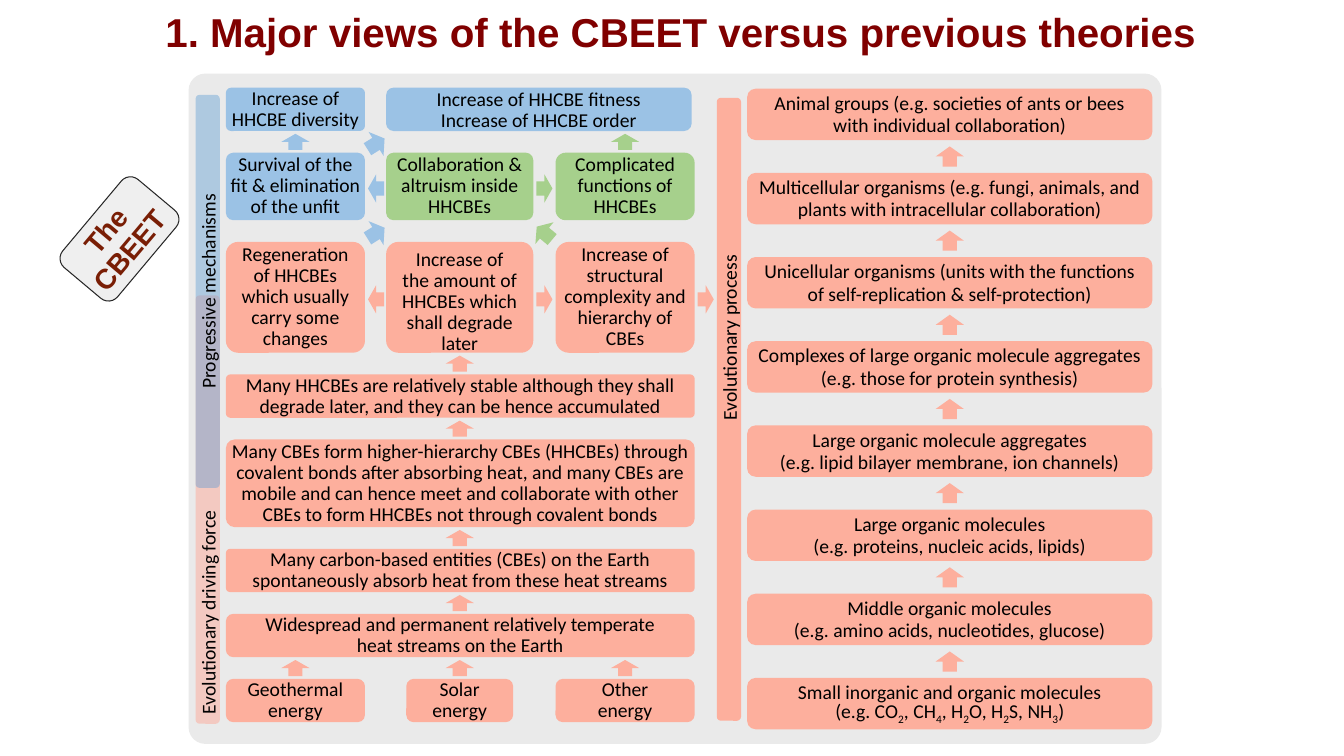
from itertools import accumulate

from lxml import etree
from pptx import Presentation
from pptx.dml.color import RGBColor
from pptx.enum.shapes import MSO_SHAPE as Shape
from pptx.enum.text import MSO_ANCHOR as Anchor, MSO_AUTO_SIZE as Auto, PP_ALIGN as Align
from pptx.oxml.ns import qn
from pptx.util import Inches, Pt

PINK, BLUE, GREEN, GREY = "FDAF9D", "9BC2E5", "A6D08C", "EAEAEA"
UP, LEFT, RIGHT = 270, 180, 0

GAP = 0.215
HEIGHTS = [0.43, 0.67, 1.1, 0.43, 0.87, 0.43, 0.43, 0.43]
TOPS = list(accumulate((h + GAP for h in HEIGHTS[:-1]), initial=0.87))
COLS = [(2.24, 1.38), (3.83, 1.46), (5.51, 1.38)]
WIDE, SOLAR, TOP_PAIR = (2.24, 4.65), (4.03, 1.06), (3.83, 3.03)

STEP_X, STEP_Y, STEP_W, STEP_H, STEP_PITCH = 7.41, 0.88, 4.02, 0.51, 0.835

SIDE = (0.04, 0.04, 0.04, 0.04)
CELLS = [
    (COLS[0], 0, BLUE, 0.12, "Increase of HHCBE diversity", {}),
    (TOP_PAIR, 0, BLUE, 0.17, "Increase of HHCBE fitness\nIncrease of HHCBE order", {"grow": True}),
    (COLS[0], 1, BLUE, 0.11, "Survival of the fit & elimination of the unfit", {"anchor": Anchor.TOP}),
    (COLS[1], 1, GREEN, 0.11, "Collaboration & altruism inside HHCBEs", {"grow": True}),
    (COLS[2], 1, GREEN, 0.15, "Complicated functions of HHCBEs", {}),
    (COLS[0], 2, PINK, 0.11, "Regeneration\nof HHCBEs which usually carry some\nchanges", {"insets": SIDE}),
    (COLS[1], 2, PINK, 0.11, "Increase of\nthe amount of HHCBEs which shall degrade later",
     {"insets": SIDE, "grow": True}),
    (COLS[2], 2, PINK, 0.12, "Increase of structural complexity and hierarchy of CBEs", {"insets": SIDE}),
    (WIDE, 3, PINK, 0.1, "Many HHCBEs are relatively stable although they shall degrade later, "
     "and they can be hence accumulated", {}),
    (WIDE, 4, PINK, 0.1, "Many CBEs form higher-hierarchy CBEs (HHCBEs) through covalent bonds "
     "after absorbing heat, and many CBEs are mobile and can hence meet and collaborate with "
     "other CBEs to form HHCBEs not through covalent bonds", {}),
    (WIDE, 5, PINK, 0.1, "Many carbon-based entities (CBEs) on the Earth spontaneously absorb "
     "heat from these heat streams", {}),
    (WIDE, 6, PINK, 0.17, "Widespread and permanent relatively temperate\nheat streams on the Earth", {}),
    (COLS[0], 7, PINK, 0.17, "Geothermal energy", {}),
    (SOLAR, 7, PINK, 0.17, "Solar\nenergy", {}),
    (COLS[2], 7, PINK, 0.17, "Other\nenergy", {}),
]
UP_ARROWS = [(0, 1, BLUE), (2, 1, GREEN), (1, 3, PINK), (1, 4, PINK), (1, 5, PINK),
             (1, 6, PINK), (0, 7, PINK), (1, 7, PINK), (2, 7, PINK)]
SIDE_ARROWS = [(0, 1, BLUE, LEFT), (1, 1, GREEN, RIGHT), (0, 2, PINK, LEFT),
               (1, 2, PINK, RIGHT), (2, 2, PINK, RIGHT)]
CORNER_ARROWS = [(0, 1, BLUE, 328), (0, 2, BLUE, 328), (1, 2, GREEN, 220)]
STEPS = [
    "Animal groups (e.g. societies of ants or bees with individual collaboration)",
    "Multicellular organisms (e.g. fungi, animals, and plants with intracellular collaboration)",
    "Unicellular organisms (units with the functions of self-replication & self-protection)",
    "Complexes of large organic molecule aggregates (e.g. those for protein synthesis)",
    "Large organic molecule aggregates\n(e.g. lipid bilayer membrane, ion channels)",
    "Large organic molecules\n(e.g. proteins, nucleic acids, lipids)",
    "Middle organic molecules\n(e.g. amino acids, nucleotides, glucose)",
    "Small inorganic and organic molecules\n(e.g. CO_2, CH_4, H_2O, H_2S, NH_3)",
]


def rgb(code):
    """Turn a hex string into a colour."""
    return RGBColor.from_string(code)


def apply(obj, values):
    """Set each attribute of obj named in a dict."""
    for name, value in values.items():
        setattr(obj, name, value)


def add_run(p, text, size=14, font="Calibri", color="000000", bold=False, sub=False):
    """Add a formatted run, optionally as a subscript."""
    r = p.add_run()
    r.text = text
    apply(r.font, {"size": Pt(size), "name": font, "bold": bold})
    r.font.color.rgb = rgb(color)
    if sub:
        r._r.get_or_add_rPr().set("baseline", "-25000")


def write(sp, text, spacing=15, align=Align.CENTER, anchor=Anchor.MIDDLE,
          insets=(0, 0, 0, 0), grow=False, **font):
    """Fill a shape with one paragraph per line; an underscore lowers the next character."""
    tf = sp.text_frame
    sides = ("margin_left", "margin_top", "margin_right", "margin_bottom")
    apply(tf, dict(zip(sides, map(Inches, insets))))
    apply(tf, {"word_wrap": True, "vertical_anchor": Anchor.TOP if grow else anchor,
               "auto_size": Auto.SHAPE_TO_FIT_TEXT if grow else Auto.NONE})
    for i, line in enumerate(text.split("\n")):
        p = tf.add_paragraph() if i else tf.paragraphs[0]
        apply(p, {"alignment": align, "line_spacing": Pt(spacing) if spacing else None})
        first, *rest = line.split("_")
        add_run(p, first, **font)
        for part in rest:
            add_run(p, part[0], sub=True, **font)
            add_run(p, part[1:], **font)


def add_block(s, kind, x, y, w, h, color, rotation=0, corner=None, opacity=None):
    """Add a plain filled shape without line or shadow."""
    sp = s.shapes.add_shape(kind, *map(Inches, (x, y, w, h)))
    sp.shadow.inherit = False
    sp.fill.solid()
    sp.fill.fore_color.rgb = rgb(color)
    sp.line.fill.background()
    sp.rotation = rotation
    if corner is not None:
        sp.adjustments[0] = corner
    if opacity is not None:
        clr = sp._element.spPr.find(".//" + qn("a:srgbClr"))
        etree.SubElement(clr, qn("a:alpha"), val=str(opacity * 1000))
    return sp


def add_arrow(s, cx, cy, color, rotation, length=0.16):
    """Add a small block arrow centred on a point."""
    add_block(s, Shape.RIGHT_ARROW, cx - length / 2, cy - 0.14, length, 0.28, color, rotation)


def add_strip(s, cx, top, bottom, color, text, opacity=None, **style):
    """Add an upright strip whose text reads upwards."""
    length = bottom - top
    sp = add_block(s, Shape.ROUNDED_RECTANGLE, cx - length / 2, (top + bottom) / 2 - 0.12,
                   length, 0.24, color, UP, opacity=opacity)
    write(sp, text, spacing=None, **style)


def add_title(s, text):
    """Place and format the title."""
    sp = s.shapes.title
    apply(sp, dict(zip(("left", "top", "width", "height"), map(Inches, (1.54, -0.03, 10.75, 0.75)))))
    write(sp, text, spacing=None, align=Align.LEFT, insets=(0.1, 0.05, 0.1, 0.05),
          size=28.8, font="Arial", color="800000", bold=True)
    sp.text_frame.paragraphs[0].line_spacing = 0.9


def add_badge(s, text):
    """Add the tilted label beside the panel."""
    sp = add_block(s, Shape.ROUNDED_RECTANGLE, 0.83, 1.8, 0.71, 1.14, GREY, 220, opacity=74)
    sp.line.color.rgb = rgb("262626")
    sp.line.width = Pt(0.75)
    write(sp, text, spacing=22, insets=(0, 0.04, 0, 0.04),
          size=20, font="Arial", color="791E05", bold=True)
    sp.text_frame._txBody.bodyPr.set("vert", "eaVert")


def add_mechanisms(s):
    """Add the grid of mechanisms and the arrows in its gaps."""
    for (x, w), row, color, corner, text, style in CELLS:
        sp = add_block(s, Shape.ROUNDED_RECTANGLE, x, TOPS[row], w, HEIGHTS[row], color, corner=corner)
        write(sp, text, **style)
    mid_x = [x + w / 2 for x, w in COLS]
    gap_x = [x + w + 0.11 for x, w in COLS]
    for col, row, color in UP_ARROWS:
        add_arrow(s, mid_x[col], TOPS[row] - GAP / 2, color, UP)
    for col, row, color, turn in SIDE_ARROWS:
        add_arrow(s, gap_x[col], TOPS[row] + HEIGHTS[row] / 2 + 0.02, color, turn)
    for col, row, color, turn in CORNER_ARROWS:
        add_arrow(s, gap_x[col], TOPS[row] - GAP / 2 + 0.02, color, turn, 0.2)


def add_ladder(s):
    """Add the evolutionary steps and the arrows between them."""
    for i, text in enumerate(STEPS):
        y = STEP_Y + i * STEP_PITCH
        sp = add_block(s, Shape.ROUNDED_RECTANGLE, STEP_X, y, STEP_W, STEP_H, PINK)
        write(sp, text, spacing=16, insets=(0.08, 0, 0.08, 0))
        if i:
            add_arrow(s, STEP_X + STEP_W / 2, y - (STEP_PITCH - STEP_H) / 2, PINK, UP, 0.2)


def main():
    """Build the slide and save it."""
    prs = Presentation()
    apply(prs, {"slide_width": Inches(13.33), "slide_height": Inches(7.5)})
    s = prs.slides.add_slide(prs.slide_layouts[5])
    add_title(s, "1. Major views of the CBEET versus previous theories")
    add_badge(s, "The CBEET")
    add_block(s, Shape.ROUNDED_RECTANGLE, 1.87, 0.73, 9.65, 6.65, GREY, corner=0.025)
    add_strip(s, 2.06, 2.93, 7.18, "FDAA99", "Evolutionary driving force", 50,
              align=Align.LEFT, insets=(0.08, 0, 0, 0))
    add_mechanisms(s)
    add_strip(s, 7.23, 0.97, 7.15, PINK, "Evolutionary process", insets=(1.5, 0, 0.08, 0))
    add_ladder(s)
    add_strip(s, 2.06, 0.94, 4.84, "5A9AD4", "Progressive mechanisms", 41)
    prs.save("out.pptx")


if __name__ == "__main__":
    main()
